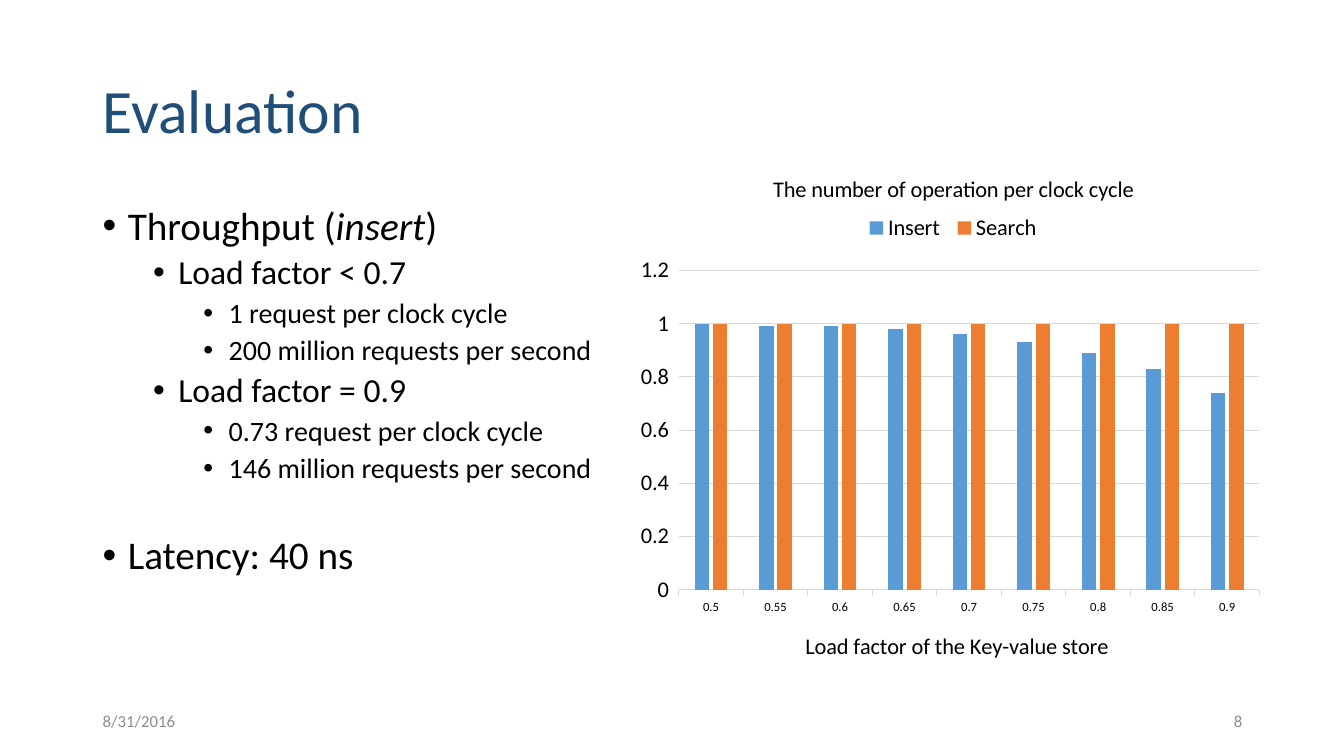
from lxml.etree import SubElement
from pptx import Presentation
from pptx.chart.data import CategoryChartData
from pptx.dml.color import RGBColor
from pptx.enum.chart import XL_CHART_TYPE, XL_LEGEND_POSITION, XL_TICK_MARK
from pptx.enum.text import MSO_ANCHOR, PP_ALIGN
from pptx.oxml import parse_xml
from pptx.oxml.ns import nsdecls, qn
from pptx.util import Inches, Pt

FONT = "Calibri"
BLACK, GREY, NAVY, RULE = "000000", "8C8C8C", "1F4E79", "D9D9D9"

# Level: text size, space before, left margin
LEVELS = [(28, 10, 0.25), (24, 5, 0.75), (20, 5, 1.25)]

# Level, runs as (text, italic)
POINTS = [
    (0, [("Throughput (", False), ("insert", True), (")", False)]),
    (1, [("Load factor < 0.7", False)]),
    (2, [("1 request per clock cycle", False)]),
    (2, [("200 million requests per second", False)]),
    (1, [("Load factor = 0.9", False)]),
    (2, [("0.73 request per clock cycle", False)]),
    (2, [("146 million requests per second", False)]),
    (0, [("Latency: 40 ns", False)]),
]

LOADS = ["0.5", "0.55", "0.6", "0.65", "0.7", "0.75", "0.8", "0.85", "0.9"]
SERIES = [
    ("Insert", [1, 0.99, 0.99, 0.98, 0.96, 0.93, 0.89, 0.83, 0.74], "5B9BD5"),
    ("Search", [1] * len(LOADS), "ED7D31"),
]


def color(code):
    return RGBColor.from_string(code)


def style(font, size, code=BLACK, italic=False):
    font.name, font.size = FONT, Pt(size)
    font.bold, font.italic = False, italic
    font.color.rgb = color(code)


def write(para, text, size=16, code=BLACK, italic=False, align=None):
    run = para.add_run()
    run.text = text
    style(run.font, size, code, italic)
    if align is not None:
        para.alignment = align


def add_box(slide, left, top, width, height, anchor=MSO_ANCHOR.TOP):
    box = slide.shapes.add_textbox(
        Inches(left), Inches(top), Inches(width), Inches(height))
    frame = box.text_frame
    frame.word_wrap = True
    frame.vertical_anchor = anchor
    return frame


def add_title(slide, text):
    title = slide.shapes.title
    title.left, title.top = Inches(0.92), Inches(0.4)
    title.width, title.height = Inches(11.5), Inches(1.45)
    frame = title.text_frame
    frame.vertical_anchor = MSO_ANCHOR.MIDDLE
    para = frame.paragraphs[0]
    para.line_spacing = 0.9
    write(para, text, size=44, code=NAVY, align=PP_ALIGN.LEFT)


def add_points(slide):
    frame = add_box(slide, 0.92, 2, 5.67, 4.76)
    for num, (level, runs) in enumerate(POINTS):
        para = frame.paragraphs[0] if num == 0 else frame.add_paragraph()
        size, before, margin = LEVELS[level]
        # The last point stands apart from the list above it
        last = num == len(POINTS) - 1
        para.level, para.line_spacing = level, 0.9
        para.space_before = Pt(37 if last else before)
        props = para._p.get_or_add_pPr()
        props.set("marL", str(Inches(margin)))
        props.set("indent", str(Inches(-0.25)))
        SubElement(props, qn("a:buFont"), typeface="Arial")
        SubElement(props, qn("a:buChar"), char="•")
        for text, italic in runs:
            write(para, text, size=size, italic=italic)


def add_note(slide, left, text, align):
    frame = add_box(slide, left, 6.95, 3, 0.4, MSO_ANCHOR.MIDDLE)
    write(frame.paragraphs[0], text, size=12, code=GREY, align=align)


def place(part, index, **spots):
    """Set a chart part's position as fractions of the chart."""
    old = part.find(qn("c:layout"))
    if old is not None:
        part.remove(old)
    inner = '<c:layoutTarget val="inner"/>' if index == 0 else ""
    modes = "".join(f'<c:{k}Mode val="edge"/>' for k in "xy")
    sizes = "".join(f'<c:{k} val="{v}"/>' for k, v in spots.items())
    part.insert(index, parse_xml(
        f'<c:layout {nsdecls("c")}><c:manualLayout>{inner}{modes}{sizes}'
        '</c:manualLayout></c:layout>'))


def name_part(title, text, x, y):
    write(title.text_frame.paragraphs[0], text)
    place(title._element, 1, x=x, y=y)


def add_graph(slide):
    data = CategoryChartData()
    data.categories = LOADS
    for name, vals, _ in SERIES:
        data.add_series(name, vals)
    chart = slide.shapes.add_chart(
        XL_CHART_TYPE.COLUMN_CLUSTERED, Inches(6.22), Inches(1.47),
        Inches(6.4), Inches(5.28), data).chart
    style(chart.font, 10)

    # Columns
    plot = chart.plots[0]
    plot.gap_width, plot.overlap = 219, -27
    plot.vary_by_categories = False
    for series, (_, _, code) in zip(plot.series, SERIES):
        series.format.fill.solid()
        series.format.fill.fore_color.rgb = color(code)
    place(plot._element.getparent(), 0, x=0.08, y=0.23, w=0.9, h=0.6)

    # Axes
    cats, vals = chart.category_axis, chart.value_axis
    for axis, size in ((cats, 9), (vals, 16)):
        axis.major_tick_mark = XL_TICK_MARK.OUTSIDE
        style(axis.tick_labels.font, size)
    vals.minimum_scale, vals.maximum_scale, vals.major_unit = 0, 1.2, 0.2
    vals.format.line.fill.background()
    for line in (cats.format.line, vals.major_gridlines.format.line):
        line.color.rgb, line.width = color(RULE), Pt(0.75)

    # Titles and legend
    name_part(chart.chart_title, "The number of operation per clock cycle",
              0.22, 0.04)
    name_part(cats.axis_title, "Load factor of the Key-value store",
              0.27, 0.9)
    chart.has_legend = True
    legend = chart.legend
    legend.position = XL_LEGEND_POSITION.TOP
    legend.include_in_layout = False
    style(legend.font, 16)
    place(legend._element, 1, x=0.36, y=0.12, w=0.29, h=0.06)


def main():
    deck = Presentation()
    deck.slide_width, deck.slide_height = Inches(13.33), Inches(7.5)
    slide = deck.slides.add_slide(deck.slide_layouts[5])
    add_title(slide, "Evaluation")
    add_points(slide)
    add_note(slide, 0.92, "8/31/2016", PP_ALIGN.LEFT)
    add_note(slide, 9.42, "8", PP_ALIGN.RIGHT)
    add_graph(slide)
    deck.save("out.pptx")


if __name__ == "__main__":
    main()
